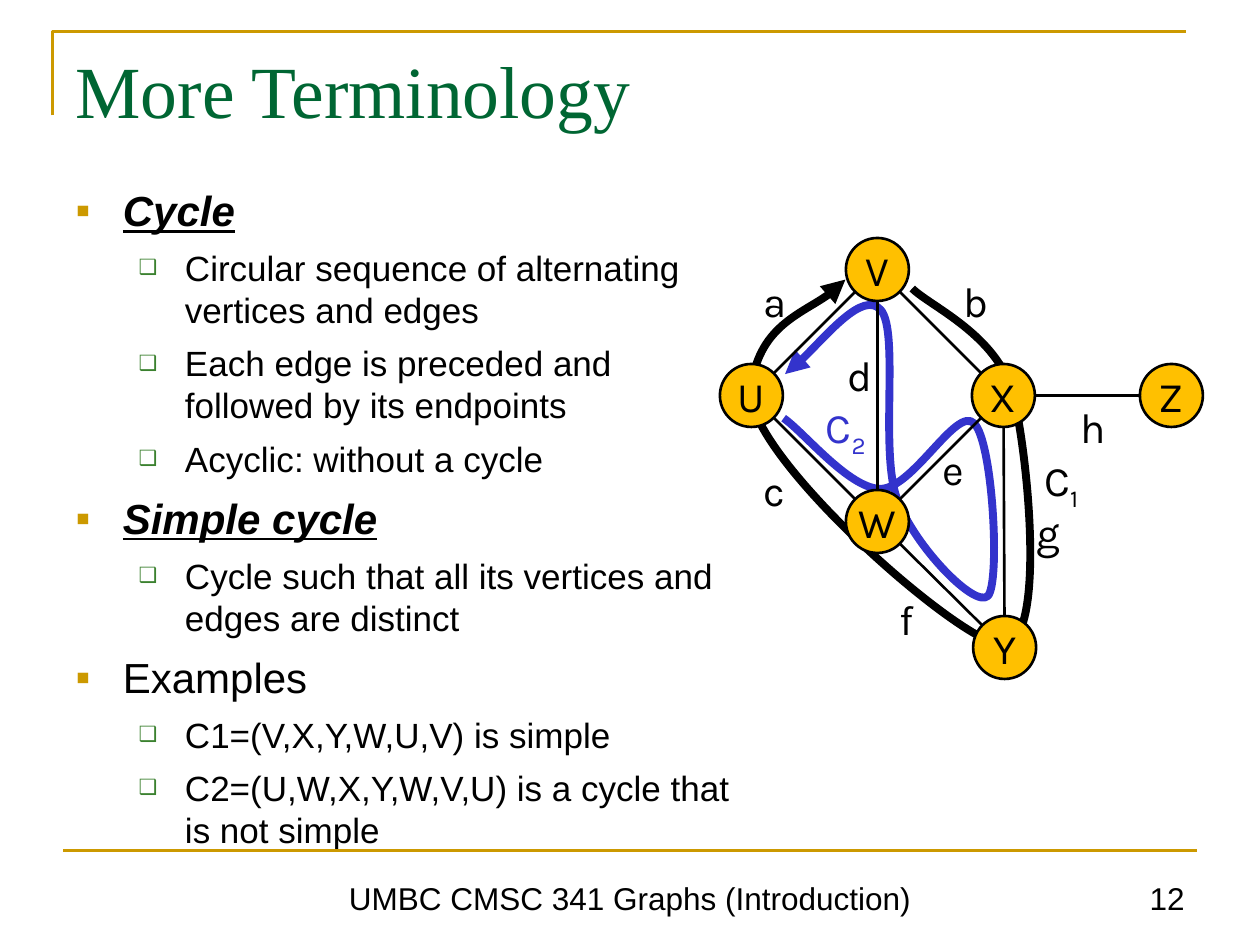
from lxml import etree
from pptx import Presentation
from pptx.dml.color import RGBColor
from pptx.enum import shapes, text
from pptx.oxml.ns import qn
from pptx.util import Pt
from math import hypot

INK = {"gold": "CC9900", "title": "006633", "black": "000000",
       "leaf": "3B812F", "node": "FFC000", "blue": "3333CC"}
TITLE = "More Terminology"
BODY = [
    ("Cycle", 0, True),
    ("Circular sequence of alternating vertices and edges", 1, False),
    ("Each edge is preceded and followed by its endpoints", 1, False),
    ("Acyclic: without a cycle", 1, False),
    ("Simple cycle", 0, True),
    ("Cycle such that all its vertices and edges are distinct", 1, False),
    ("Examples", 0, False),
    ("C1=(V,X,Y,W,U,V) is simple", 1, False),
    ("C2=(U,W,X,Y,W,V,U) is a cycle that is not simple", 1, False),
]
LEVELS = [
    {"size": 24, "left": 27, "hang": 27, "gap": 7.5, "mark": "▪", "ink": "gold", "scale": 100},
    {"size": 20, "left": 62.5, "hang": 26.5, "gap": 6.5, "mark": "❑", "ink": "leaf", "scale": 60},
]
FOOT = [
    ("UMBC CMSC 341 Graphs (Introduction)", 126, 468, "CENTER"),
    ("12", 516, 168, "RIGHT"),
]
RADIUS = 18
NODES = {"X": (573.4, 226), "U": (429.4, 226), "V": (501.4, 154),
         "W": (501.4, 298), "Z": (669.4, 226), "Y": (574.1, 370)}
EDGES = ["VU", "WU", "WX", "XZ", "VX", "VW", "WY", "XY"]
LABELS = [
    ("a", "", 429, 154, 27, "black"), ("c", "", 429, 262, 26, "black"),
    ("b", "", 543.5, 154, 28, "black"), ("e", "", 531.5, 250, 27, "black"),
    ("d", "", 477.5, 196, 28, "black"), ("f", "", 507, 335.5, 22, "black"),
    ("g", "", 585.5, 286, 28, "black"), ("h", "", 610.3, 226, 28, "black"),
    ("C", "1", 589.7, 256.3, 37.5, "black"), ("C", "2", 464.8, 226, 37.5, "blue"),
]
CYCLES = [
    ("black", "tailEnd", [
        (521.3, 164.9), (531.4, 175), (570.2, 191.5), (578.9, 225.4),
        (587.5, 259.2), (598.3, 368.6), (573.1, 368.6),
        (548.6, 367.9), (426.2, 259.9), (429.1, 223.2),
        (432.7, 186.5), (472.3, 173.5), (483.1, 159.8)]),
    ("blue", "headEnd", [
        (448.6, 213.8), (457.9, 208.1), (493.2, 165.6), (503.3, 177.1),
        (514.1, 189.4), (502.6, 257.8), (512.6, 285.1),
        (522.7, 312.5), (557.3, 347.8), (564.5, 340.6),
        (571.7, 333.4), (567.4, 252), (556.6, 241.9),
        (546.5, 231.8), (521.3, 280.1), (502.6, 279.4),
        (484.6, 278.6), (459.4, 247), (447.8, 239)]),
]


def tint(ink):
    return RGBColor.from_string(INK[ink])


def stroke(item, ink, width):
    item.line.color.rgb = tint(ink)
    item.line.width = Pt(width)


def style(run, face, size, ink):
    run.font.name, run.font.size = face, Pt(size)
    run.font.color.rgb = tint(ink)


def place(item, *box):
    item.left, item.top, item.width, item.height = map(Pt, box)


def link(tree, ink, *ends):
    line = tree.add_connector(shapes.MSO_CONNECTOR.STRAIGHT, *map(Pt, ends))
    stroke(line, ink, 1.5)
    etree.SubElement(line._element.spPr, qn("a:effectLst"))


def outline(tree, points, ink, width):
    build = tree.build_freeform(Pt(points[0][0]), Pt(points[0][1]))
    build.add_line_segments([(Pt(x), Pt(y)) for x, y in points[1:]], close=False)
    item = build.convert_to_shape()
    item.fill.background()
    item.shadow.inherit = False
    stroke(item, ink, width)
    return item


def bend(item):
    sides = list(item._element.iter(qn("a:lnTo")))
    for k in range(0, len(sides), 3):
        arc = etree.Element(qn("a:cubicBezTo"))
        sides[k].addprevious(arc)
        for side in sides[k:k + 3]:
            arc.append(side[0])
            side.getparent().remove(side)


def bullet(para, left, hang, mark, ink, scale):
    props = para._p.get_or_add_pPr()
    props.set("marL", str(Pt(left)))
    props.set("indent", str(-Pt(hang)))
    color = etree.SubElement(props, qn("a:buClr"))
    etree.SubElement(color, qn("a:srgbClr"), val=INK[ink])
    etree.SubElement(props, qn("a:buSzPct"), val=str(scale * 1000))
    etree.SubElement(props, qn("a:buFont"), typeface="Arial")
    etree.SubElement(props, qn("a:buChar"), char=mark)


def write(slide):
    title, body = slide.placeholders
    place(title, 36, 21.9, 647.3, 80)
    title.text_frame.text = TITLE
    title.text_frame.vertical_anchor = text.MSO_ANCHOR.TOP
    title.text_frame.auto_size = text.MSO_AUTO_SIZE.NONE
    head = title.text_frame.paragraphs[0]
    head.alignment = text.PP_ALIGN.LEFT
    style(head.runs[0], "Times New Roman", 42, "title")

    place(body, 36, 102, 390.2, 380.2)
    frame = body.text_frame
    frame.auto_size = text.MSO_AUTO_SIZE.NONE
    frame.text = "\n".join(line for line, _, _ in BODY)
    for para, (_, level, term) in zip(frame.paragraphs, BODY):
        look = LEVELS[level]
        para.level = level
        para.space_before = Pt(look["gap"])
        bullet(para, *(look[key] for key in ("left", "hang", "mark", "ink", "scale")))
        run = para.runs[0]
        style(run, "Arial", look["size"], "black")
        run.font.bold = run.font.italic = run.font.underline = term

    for line, left, width, side in FOOT:
        box = slide.shapes.add_textbox(*map(Pt, (left, 492, width, 35.3)))
        box.text_frame.word_wrap = True
        box.text_frame.vertical_anchor = text.MSO_ANCHOR.BOTTOM
        box.text_frame.text = line
        para = box.text_frame.paragraphs[0]
        para.alignment = text.PP_ALIGN[side]
        style(para.runs[0], "Arial", 18, "black")


def draw(tree):
    for ink, end, knots in CYCLES:
        item = outline(tree, knots, ink, 4.5)
        bend(item)
        etree.SubElement(item.line._get_or_add_ln(), qn("a:" + end), type="triangle")

    for name, (x, y) in NODES.items():
        node = tree.add_shape(shapes.MSO_SHAPE.OVAL, Pt(x - RADIUS), Pt(y - RADIUS),
                              Pt(2 * RADIUS), Pt(2 * RADIUS))
        node.shadow.inherit = False
        node.fill.solid()
        node.fill.fore_color.rgb = tint("node")
        stroke(node, "black", 1.5)
        frame = node.text_frame
        frame.word_wrap = False
        frame.vertical_anchor = text.MSO_ANCHOR.MIDDLE
        frame.text = name
        frame.paragraphs[0].alignment = text.PP_ALIGN.CENTER
        style(frame.paragraphs[0].runs[0], "Karla", 24, "black")

    for start, stop in EDGES:
        (ax, ay), (bx, by) = NODES[start], NODES[stop]
        part = RADIUS / hypot(bx - ax, by - ay)
        dx, dy = (bx - ax) * part, (by - ay) * part
        link(tree, "black", ax + dx, ay + dy, bx - dx, by - dy)

    for name, sub, left, top, width, ink in LABELS:
        box = tree.add_textbox(Pt(left), Pt(top), Pt(width), Pt(36))
        box.text_frame.word_wrap = False
        box.text_frame.text = name
        para = box.text_frame.paragraphs[0]
        if sub:
            low = para.add_run()
            low.text = sub
            low.font._element.set("baseline", "-25000")
        for run in para.runs:
            style(run, "Karla", 24, ink)


def main():
    deck = Presentation()
    deck.slide_width, deck.slide_height = Pt(720), Pt(540)
    slide = deck.slides.add_slide(deck.slide_layouts[1])
    outline(slide.shapes, [(30, 66), (30, 18), (678, 18)], "gold", 1.5)
    link(slide.shapes, "gold", 36, 486, 684, 486)
    write(slide)
    draw(slide.shapes)
    deck.save("out.pptx")


if __name__ == "__main__":
    main()
